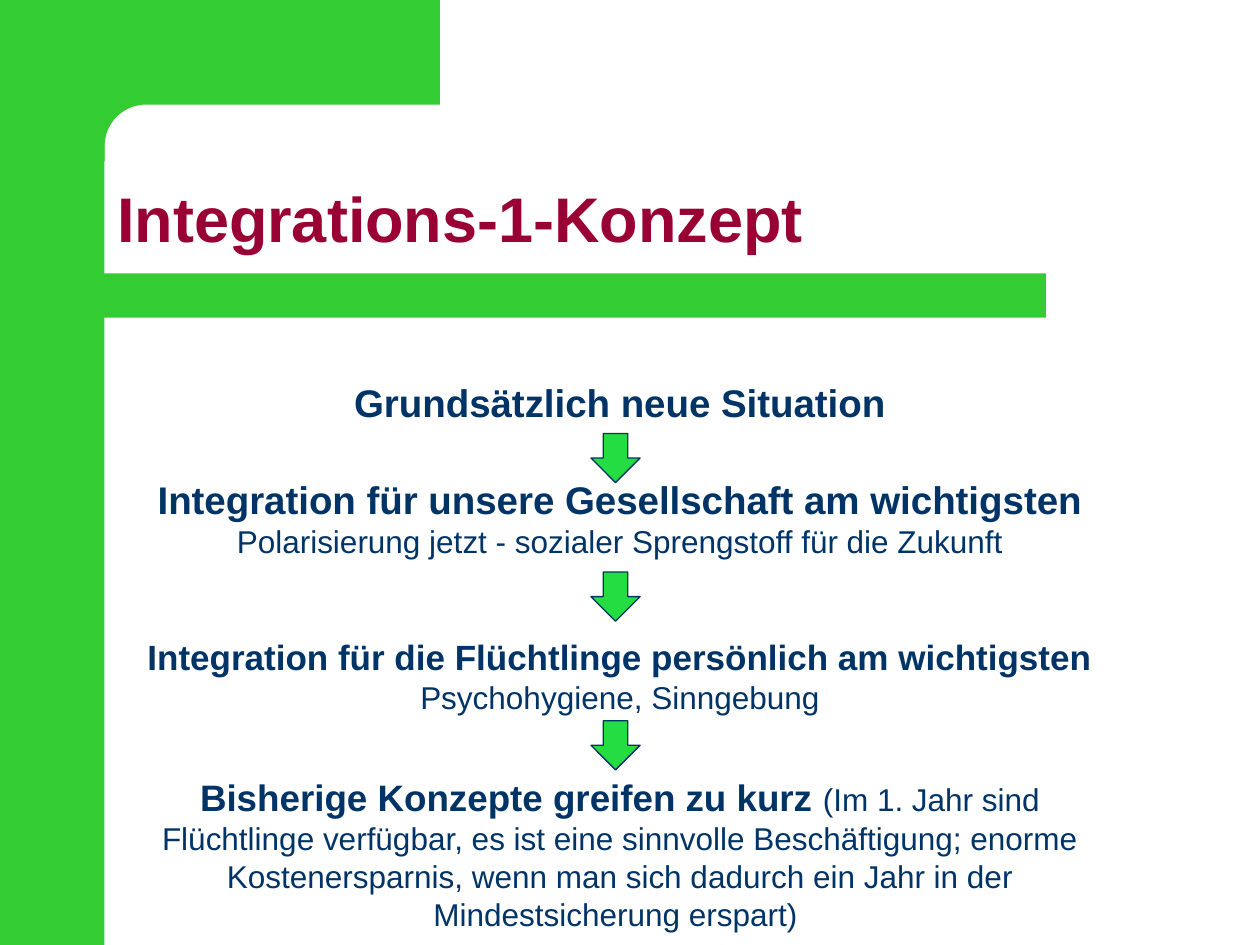
"""Builds the integration concept slide with its green frame and arrow chain."""
import math
from pptx import Presentation
from pptx import util as u
from pptx.dml.color import RGBColor
from pptx.enum import shapes, text

GREEN, LIME, NAVY, WINE = "33CC33", "23DD42", "003366", "990033"
TITLE = "Integrations-1-Konzept"
LINES = [
    (0, [("Grundsätzlich neue Situation", 22, True)]),
    (29, [("Integration für unsere Gesellschaft am wichtigsten", 22, True)]),
    (0, [("Polarisierung jetzt - sozialer Sprengstoff für die Zukunft", 18, False)]),
    (43.4, [("Integration für die Flüchtlinge persönlich am wichtigsten", 20, True)]),
    (0, [("Psychohygiene, Sinngebung", 18, False)]),
    (33.8, [("Bisherige Konzepte greifen zu kurz ", 21, True),
            ("(Im 1. Jahr sind Flüchtlinge verfügbar, es ist eine sinnvolle "
             "Beschäftigung; enorme Kostenersparnis, wenn man sich dadurch ein "
             "Jahr in der Mindestsicherung erspart) ", 18, False)]),
]
ARROWS = [3.44, 4.54, 5.72]
KIND = shapes.MSO_SHAPE


def place(box):
    return [u.Inches(v) for v in box]


def paint(shape, fill, line=None):
    shape.shadow.inherit = False
    shape.fill.solid()
    shape.fill.fore_color.rgb = RGBColor.from_string(fill)
    if line:
        shape.line.color.rgb = RGBColor.from_string(line)
        shape.line.width = u.Pt(0.75)
    else:
        shape.line.fill.background()


def style(run, size, bold, color):
    run.font.name = "Arial"
    run.font.size = u.Pt(size)
    run.font.bold = bold
    run.font.color.rgb = RGBColor.from_string(color)


def add(slide, kind, box, fill, line=None):
    shape = slide.shapes.add_shape(kind, *place(box))
    paint(shape, fill, line)
    return shape


def frame(slide):
    add(slide, KIND.RECTANGLE, (0, 0, 0.83, 7.5), GREEN)
    mid, rad = 1.16, 0.33
    turns = [math.radians(90 * i / 16) for i in range(17)]
    arc = [(mid - rad * math.sin(t), mid - rad * math.cos(t)) for t in turns]
    points = [(3.49, 0.83), *arc, (0.83, 1.28), (0.5, 1.28), (0.5, 0)]
    pen = slide.shapes.build_freeform(u.Inches(3.49), 0)
    pen.add_line_segments([place(p) for p in points], close=True)
    paint(pen.convert_to_shape(), GREEN)
    bar = add(slide, KIND.ROUNDED_RECTANGLE, (0.66, 2.17, 7.64, 0.35), GREEN)
    bar.adjustments[0] = 0
    cap = add(slide, KIND.FLOWCHART_DELAY, (0.25, 2.17, 0.43, 0.35), GREEN)
    cap._element.spPr.xfrm.set("flipH", "1")


def head(slide):
    title = slide.shapes.title
    title.left, title.top, title.width, title.height = place((0.83, 0.83, 7.08, 1.25))
    body = title.text_frame
    body.text = TITLE
    body.auto_size = text.MSO_AUTO_SIZE.NONE
    body.vertical_anchor = text.MSO_ANCHOR.BOTTOM
    para = body.paragraphs[0]
    para.alignment = text.PP_ALIGN.LEFT
    para.line_spacing = 0.9
    style(para.runs[0], 36, True, WINE)


def chain(slide):
    body = slide.shapes.add_textbox(*place((1.06, 2.96, 7.72, 4.5))).text_frame
    body.word_wrap = True
    for i, (gap, runs) in enumerate(LINES):
        para = body.add_paragraph() if i else body.paragraphs[0]
        para.alignment = text.PP_ALIGN.CENTER
        para.space_before = u.Pt(gap)
        for words, size, bold in runs:
            run = para.add_run()
            run.text = words
            style(run, size, bold, NAVY)
    for top in ARROWS:
        add(slide, KIND.DOWN_ARROW, (4.69, top, 0.39, 0.39), LIME, NAVY)


def main():
    deck = Presentation()
    deck.slide_width, deck.slide_height = place((10, 7.5))
    slide = deck.slides.add_slide(deck.slide_layouts[5])
    frame(slide)
    head(slide)
    chain(slide)
    deck.save("out.pptx")


if __name__ == "__main__":
    main()
